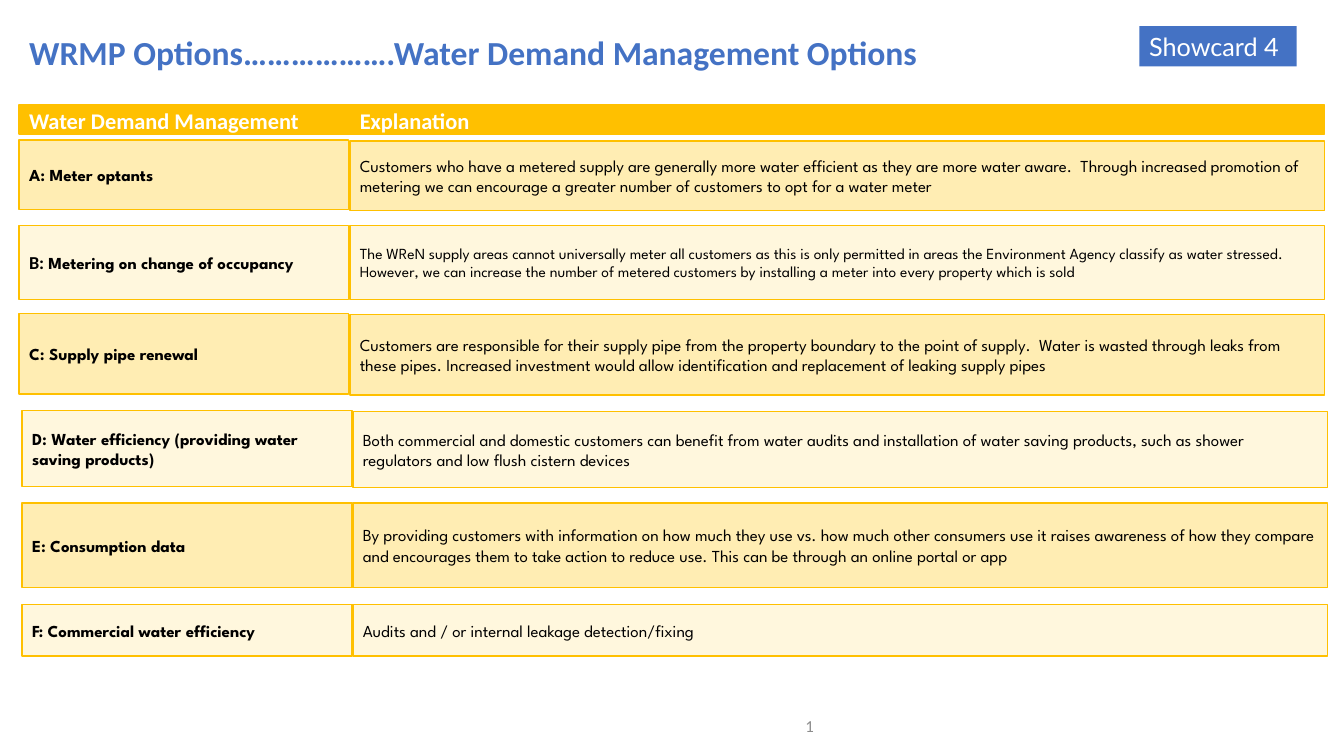
from dataclasses import dataclass
from pptx import Presentation
from pptx.dml.color import RGBColor
from pptx.enum.shapes import MSO_SHAPE
from pptx.enum.text import MSO_ANCHOR, PP_ALIGN
from pptx.util import Inches, Pt


@dataclass(frozen=True)
class Theme:
    blue: str = "4472C4"
    gold: str = "FFC000"
    amber: str = "FFEDB3"
    cream: str = "FFF7DD"
    grey: str = "8C8C8C"
    black: str = "000000"
    white: str = "FFFFFF"
    head: str = "Calibri"
    body: str = "League Spartan"
    badge: str = "Lato"
    title_size: float = 24
    badge_size: float = 18
    head_size: float = 16
    key_size: float = 13
    body_size: float = 12
    small_size: float = 11


class Card:
    def __init__(self, deck, theme):
        self.theme = theme
        self.slide = deck.slides.add_slide(deck.slide_layouts[6])

    def put_text(self, shape, runs, anchor=MSO_ANCHOR.MIDDLE, **layout):
        """Fill a shape with one paragraph of (text, font, size, colour, bold) runs."""
        frame = shape.text_frame
        frame.word_wrap = True
        frame.vertical_anchor = anchor
        para = frame.paragraphs[0]
        for name, value in {"alignment": PP_ALIGN.LEFT, **layout}.items():
            setattr(para, name, value)
        for text, face, size, color, bold in runs:
            run = para.add_run()
            run.text = text
            style = {"name": face, "size": Pt(size), "bold": bold}
            for name, value in style.items():
                setattr(run.font, name, value)
            run.font.color.rgb = RGBColor.from_string(color)

    def label(self, area, runs, **layout):
        box = self.slide.shapes.add_textbox(*map(Inches, area))
        self.put_text(box, runs, **layout)

    def block(self, area, fill, runs, edge=None, group=None, **layout):
        shapes = (group or self.slide).shapes
        rect = shapes.add_shape(MSO_SHAPE.RECTANGLE, *map(Inches, area))
        rect.shadow.inherit = False
        rect.fill.solid()
        rect.fill.fore_color.rgb = RGBColor.from_string(fill)
        if edge:
            rect.line.color.rgb = RGBColor.from_string(edge)
            rect.line.width = Pt(1)
        else:
            rect.line.fill.background()
        self.put_text(rect, runs, **layout)

    def row(self, cells, fill, **layout):
        """Group the (area, runs) cells of one table row."""
        group = self.slide.shapes.add_group_shape()
        for area, runs in cells:
            self.block(area, fill, runs, self.theme.gold, group, **layout)


LEFT, SHIFT = 0.19, 0.03
NAME_W, TEXT_LEFT, TEXT_W = 3.27, 3.47, 9.67
HEAD_TOP, HEAD_H, HEAD_W = 1.04, 0.29, 3.54

# key, name, explanation, name top, text top, height, left shift
OPTIONS = [
    ("A: ", "Meter optants",
     "Customers who have a metered supply are generally more water efficient as they are "
     "more water aware.  Through increased promotion of metering we can encourage a greater "
     "number of customers to opt for a water meter", 1.39, 1.4, 0.69, 0),
    ("B: ", "Metering on change of occupancy",
     "The WReN supply areas cannot universally meter all customers as this is only permitted "
     "in areas the Environment Agency classify as water stressed. However, we can increase the "
     "number of metered customers by installing a meter into every property which is sold",
     2.24, 2.24, 0.73, 0),
    ("C: ", "Supply pipe renewal",
     "Customers are responsible for their supply pipe from the property boundary to the point "
     "of supply.  Water is wasted through leaks from these pipes. Increased investment would "
     "allow identification and replacement of leaking supply pipes", 3.11, 3.12, 0.8, 0),
    ("D: ", "Water efficiency (providing water saving products)",
     "Both commercial and domestic customers can benefit from water audits and installation of "
     "water saving products, such as shower regulators and low flush cistern devices",
     4.07, 4.08, 0.76, SHIFT),
    ("E: ", "Consumption data",
     "By providing customers with information on how much they use vs. how much other consumers "
     "use it raises awareness of how they compare and encourages them to take action to reduce "
     "use. This can be through an online portal or app", 4.99, 4.99, 0.84, SHIFT),
    ("F: ", "Commercial water efficiency",
     "Audits and / or internal leakage detection/fixing", 6, 6, 0.51, SHIFT),
]


def main():
    deck = Presentation()
    deck.slide_width, deck.slide_height = Inches(13.33), Inches(7.5)
    theme = Theme()
    card = Card(deck, theme)

    card.label((5.17, 7, 3, 0.4),
               [("1", theme.head, theme.body_size, theme.grey, False)],
               alignment=PP_ALIGN.RIGHT)
    card.label((LEFT, 0.2, 11.5, 0.69),
               [("WRMP Options……………….Water Demand Management Options",
                 theme.head, theme.title_size, theme.blue, True)], line_spacing=0.9)
    card.block((11.3, 0.26, 1.56, 0.4), theme.blue,
               [("Showcard 4", theme.badge, theme.badge_size, theme.white, False)],
               anchor=MSO_ANCHOR.TOP)

    heads = [("Water Demand Management", LEFT, HEAD_W), ("Explanation", TEXT_LEFT, TEXT_W)]
    card.row([((left, HEAD_TOP, width, HEAD_H),
               [(text, theme.head, theme.head_size, theme.white, True)])
              for text, left, width in heads],
             theme.gold, line_spacing=1.07, space_after=Pt(8))

    for i, (key, name, text, top, text_top, height, shift) in enumerate(OPTIONS):
        special = key == "B: "
        face, size = (theme.head, theme.key_size) if special else (theme.body, theme.body_size)
        small = theme.small_size if special else theme.body_size
        title = [(key, face, size, theme.black, True),
                 (name, theme.body, theme.body_size, theme.black, True)]
        detail = [(text, theme.body, small, theme.black, False)]
        card.row([((LEFT + shift, top, NAME_W, height), title),
                  ((TEXT_LEFT + shift, text_top, TEXT_W, height), detail)],
                 theme.cream if i % 2 else theme.amber)

    deck.save("out.pptx")


if __name__ == "__main__":
    main()
